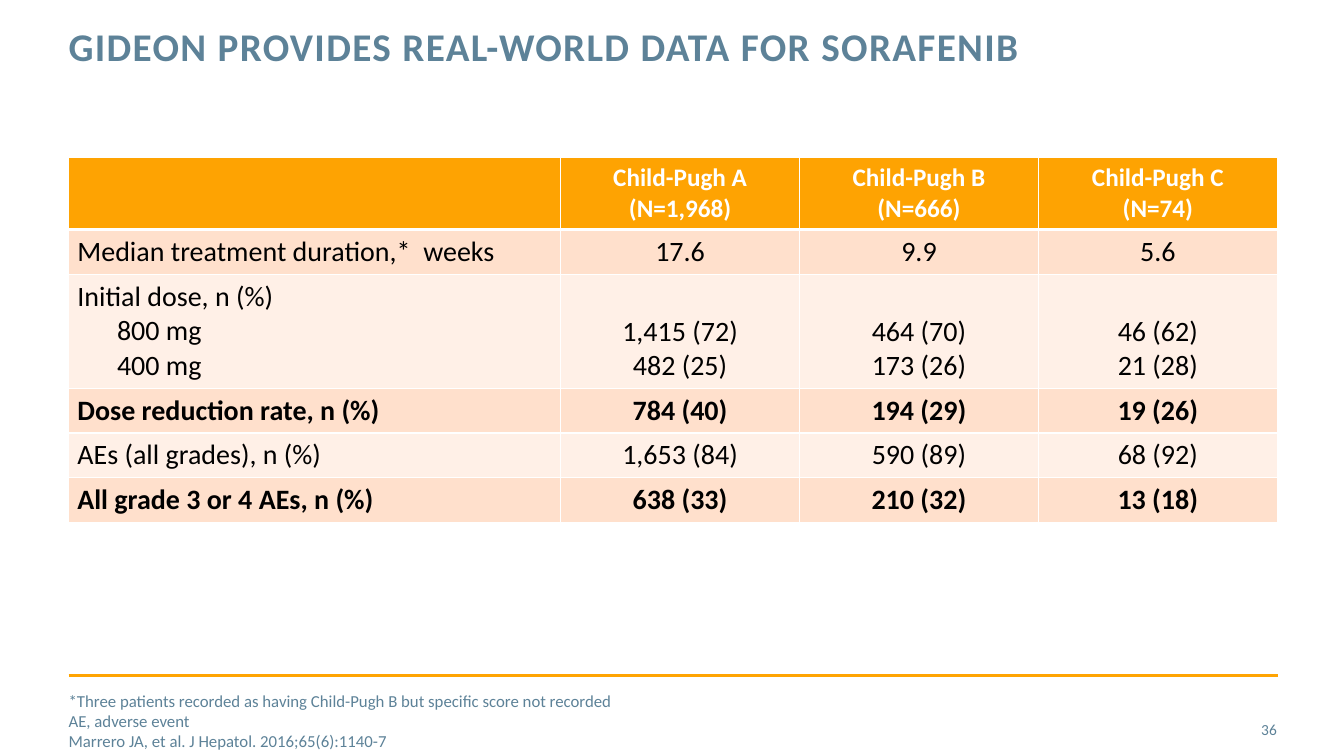
from dataclasses import dataclass

import lxml.etree
import pptx
import pptx.dml.color
import pptx.enum.shapes
import pptx.enum.text
import pptx.oxml.ns
import pptx.util
from pptx.util import Cm, Pt

ALIGN = pptx.enum.text.PP_ALIGN
ANCHOR = pptx.enum.text.MSO_ANCHOR


@dataclass(frozen=True)
class Theme:
    font: str = "Calibri"
    slate: str = "5D8298"
    orange: str = "FFA402"
    header_fill: str = "FEA302"
    bands: tuple[str, str] = ("FFE0CC", "FFF0E7")
    white: str = "FFFFFF"
    black: str = "000000"
    title_size: float = 28
    body_size: float = 20
    header_size: float = 18
    note_size: float = 12
    number_size: float = 11


@dataclass(frozen=True)
class TextStyle:
    size: float
    color: str
    bold: bool = False
    align: ALIGN = ALIGN.LEFT


@dataclass(frozen=True)
class Row:
    label: list[str]
    values: list[list[str]]
    height: float = 1.13
    bold: bool = False


THEME = Theme()
LEFT, RIGHT = 1.73, 32.2
LABEL_WIDTH, VALUE_WIDTH = 12.4, 6.02
HEADER_HEIGHT = 1.79
SUBITEM_INDENT = 1.0
HEADINGS = [[], ["Child-Pugh A", "(N=1,968)"], ["Child-Pugh B", "(N=666)"],
            ["Child-Pugh C", "(N=74)"]]
ROWS = [
    Row(["Median treatment duration,*  weeks"], [["17.6"], ["9.9"], ["5.6"]]),
    Row(["Initial dose, n (%)", "800 mg", "400 mg"],
        [["1,415 (72)", "482 (25)"], ["464 (70)", "173 (26)"], ["46 (62)", "21 (28)"]],
        height=2.87),
    Row(["Dose reduction rate, n (%)"], [["784 (40)"], ["194 (29)"], ["19 (26)"]], bold=True),
    Row(["AEs (all grades), n (%)"], [["1,653 (84)"], ["590 (89)"], ["68 (92)"]]),
    Row(["All grade 3 or 4 AEs, n (%)"], [["638 (33)"], ["210 (32)"], ["13 (18)"]], bold=True),
]
FOOTNOTES = ["*Three patients recorded as having Child-Pugh B but specific score not recorded",
             "AE, adverse event",
             "Marrero JA, et al. J Hepatol. 2016;65(6):1140-7"]


def rgb(color: str) -> pptx.dml.color.RGBColor:
    return pptx.dml.color.RGBColor.from_string(color)


def write(frame, lines: list[str], style: TextStyle) -> None:
    """Fill a text frame with one paragraph per line."""
    for index, line in enumerate(lines):
        para = frame.paragraphs[0] if index == 0 else frame.add_paragraph()
        para.text = line
        para.alignment = style.align
        para.font.name = THEME.font
        para.font.size = Pt(style.size)
        para.font.bold = style.bold
        para.font.color.rgb = rgb(style.color)


def clear_margins(frame, anchor: ANCHOR) -> None:
    frame.margin_left = frame.margin_right = frame.margin_top = frame.margin_bottom = 0
    frame.word_wrap = True
    frame.auto_size = pptx.enum.text.MSO_AUTO_SIZE.NONE
    frame.vertical_anchor = anchor


def add_title(page, text: str) -> None:
    title = page.shapes.title
    title.left, title.top, title.width, title.height = Cm(LEFT), Cm(0.69), Cm(24.28), Cm(2.24)
    clear_margins(title.text_frame, ANCHOR.TOP)
    write(title.text_frame, [text], TextStyle(THEME.title_size, THEME.slate, bold=True))
    para = title.text_frame.paragraphs[0]
    para.line_spacing = Pt(30)
    para.runs[0]._r.get_or_add_rPr().set("spc", "100")


def add_text(page, left: float, top: float, width: float, lines: list[str],
             style: TextStyle) -> None:
    box = page.shapes.add_textbox(Cm(left), Cm(top), Cm(width), Cm(1.02))
    clear_margins(box.text_frame, ANCHOR.MIDDLE)
    write(box.text_frame, lines, style)


def add_rule(page) -> None:
    rule = page.shapes.add_connector(pptx.enum.shapes.MSO_CONNECTOR.STRAIGHT,
                                     Cm(LEFT), Cm(17.02), Cm(RIGHT), Cm(17.02))
    rule.line.color.rgb = rgb(THEME.orange)
    rule.line.width = Pt(2)
    lxml.etree.SubElement(rule._element.spPr, pptx.oxml.ns.qn("a:effectLst"))


def set_borders(cell, top: float = 1, bottom: float = 1) -> None:
    qn = pptx.oxml.ns.qn
    properties = cell._tc.get_or_add_tcPr()
    for side, width in (("L", 1), ("R", 1), ("T", top), ("B", bottom)):
        line = lxml.etree.SubElement(properties, qn(f"a:ln{side}"), w=str(Pt(width)))
        fill = lxml.etree.SubElement(line, qn("a:solidFill"))
        lxml.etree.SubElement(fill, qn("a:srgbClr"), val=THEME.white)


def format_cell(cell, fill: str, side_margin: float, anchor: ANCHOR) -> None:
    cell.fill.solid()
    cell.fill.fore_color.rgb = rgb(fill)
    cell.margin_left = cell.margin_right = Cm(side_margin)
    cell.margin_top = cell.margin_bottom = Cm(0.13)
    cell.vertical_anchor = anchor


def add_results_table(page) -> None:
    heights = [HEADER_HEIGHT] + [row.height for row in ROWS]
    widths = [LABEL_WIDTH] + [VALUE_WIDTH] * 3
    table = page.shapes.add_table(len(heights), len(widths), Cm(LEFT), Cm(3.97),
                                  Cm(sum(widths)), Cm(sum(heights))).table
    table.first_row = table.horz_banding = False
    for column, width in zip(table.columns, widths):
        column.width = Cm(width)
    for table_row, height in zip(table.rows, heights):
        table_row.height = Cm(height)

    heading_style = TextStyle(THEME.header_size, THEME.white, True, ALIGN.CENTER)
    for cell, heading in zip(table.rows[0].cells, HEADINGS):
        set_borders(cell, bottom=3)
        format_cell(cell, THEME.header_fill, 0.1, ANCHOR.TOP)
        write(cell.text_frame, heading, heading_style)

    for index, row in enumerate(ROWS):
        label_cell, *value_cells = table.rows[index + 1].cells
        fill = THEME.bands[index % 2]
        for cell in (label_cell, *value_cells):
            set_borders(cell, top=3 if index == 0 else 1)
        format_cell(label_cell, fill, 0.22, ANCHOR.MIDDLE)
        write(label_cell.text_frame, row.label, TextStyle(THEME.body_size, THEME.black, row.bold))
        for para in label_cell.text_frame.paragraphs[1:]:
            para._p.get_or_add_pPr().set("marL", str(Cm(SUBITEM_INDENT)))
        for cell, lines in zip(value_cells, row.values):
            format_cell(cell, fill, 0.1, ANCHOR.BOTTOM)
            write(cell.text_frame, lines,
                  TextStyle(THEME.body_size, THEME.black, row.bold, ALIGN.CENTER))


def main() -> None:
    deck = pptx.Presentation()
    deck.slide_width, deck.slide_height = Cm(33.87), Cm(19.05)
    page = deck.slides.add_slide(deck.slide_layouts.get_by_name("Title Only"))
    add_rule(page)
    add_results_table(page)
    add_title(page, "GIDEON PROVIDES REAL-WORLD DATA FOR SORAFENIB")
    add_text(page, LEFT, 17.65, 22.56, FOOTNOTES, TextStyle(THEME.note_size, THEME.slate))
    add_text(page, 30, 17.86, 2.18, ["36"],
             TextStyle(THEME.number_size, THEME.slate, align=ALIGN.RIGHT))
    deck.save("out.pptx")


if __name__ == "__main__":
    main()
